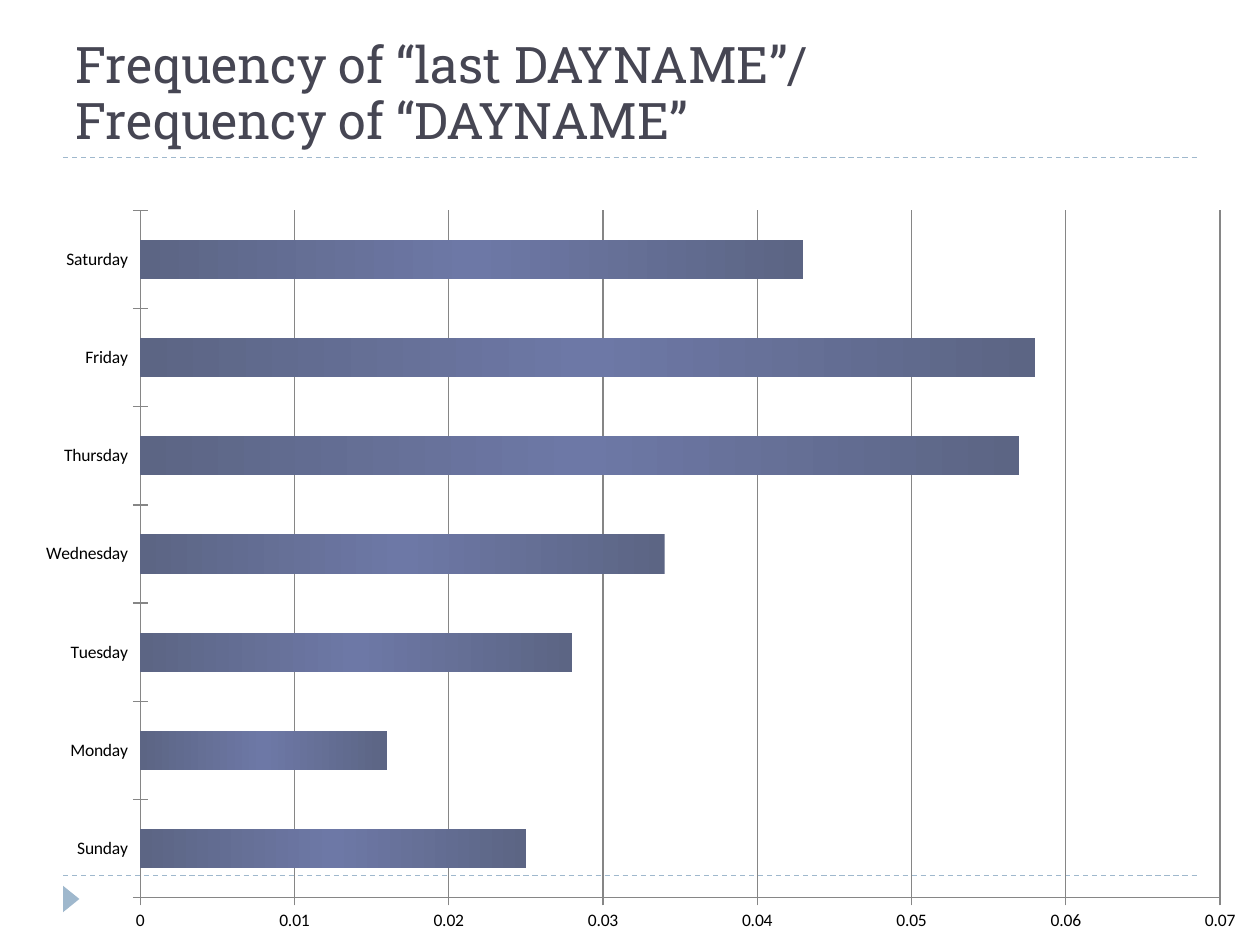
"""Build a slide with a bar chart of how often day names follow the word "last"."""
from lxml.etree import SubElement
from pptx import Presentation
from pptx.chart.data import CategoryChartData
from pptx.dml.color import RGBColor
from pptx.enum.chart import XL_CHART_TYPE, XL_TICK_MARK
from pptx.enum.dml import MSO_LINE
from pptx.enum.shapes import MSO_CONNECTOR, MSO_SHAPE
from pptx.enum.text import MSO_ANCHOR, MSO_AUTO_SIZE, PP_ALIGN
from pptx.oxml.ns import qn
from pptx.util import Inches, Pt

TITLE = ["Frequency of “last DAYNAME”/", "Frequency of “DAYNAME”"]
SHARES = {
    "Sunday": 0.025,
    "Monday": 0.016,
    "Tuesday": 0.028,
    "Wednesday": 0.034,
    "Thursday": 0.057,
    "Friday": 0.058,
    "Saturday": 0.043,
}
RULE_YS = [1.25, 6.95]

INK = RGBColor(0x46, 0x46, 0x53)
BLACK = RGBColor(0, 0, 0)
PALE_BLUE = RGBColor(0x9F, 0xB8, 0xCD)
GRID = RGBColor(0x86, 0x86, 0x86)
BAR_EDGE = RGBColor(0x5C, 0x65, 0x84)
BAR_MIDDLE = RGBColor(0x6D, 0x78, 0xA6)
BAR_STOPS = [(0, BAR_EDGE), (50, BAR_MIDDLE), (100, BAR_EDGE)]


def add_rule(s, y):
    line = s.shapes.add_connector(
        MSO_CONNECTOR.STRAIGHT, Inches(0.5), Inches(y), Inches(9.5), Inches(y))
    line.line.color.rgb = PALE_BLUE
    line.line.width = Pt(0.75)
    line.line.dash_style = MSO_LINE.DASH
    SubElement(line._element.spPr, qn("a:effectLst"))


def add_marker(s):
    sp = s.shapes.add_shape(MSO_SHAPE.ISOSCELES_TRIANGLE, Inches(0.46),
                            Inches(7.07), Inches(0.21), Inches(0.13))
    sp.rotation = 90
    sp.shadow.inherit = False
    sp.fill.solid()
    sp.fill.fore_color.rgb = PALE_BLUE
    sp.line.fill.background()


def fill_title(sp):
    sp.left, sp.top, sp.width, sp.height = map(Inches, (0.5, 0.25, 9, 1))
    tf = sp.text_frame
    tf.auto_size = MSO_AUTO_SIZE.NONE
    tf.vertical_anchor = MSO_ANCHOR.BOTTOM
    p = tf.paragraphs[0]
    p.alignment = PP_ALIGN.LEFT
    p.line_spacing = 0.93
    for i, text in enumerate(TITLE):
        if i:
            p.add_line_break()
        r = p.add_run()
        r.text = text
        r.font.name = "Roboto Slab"
        r.font.size = Pt(28.8)
        r.font.color.rgb = INK


def fill_bars(series):
    fill = series.format.fill
    fill.gradient()
    fill.gradient_angle = 0
    stops = fill._fill._gradFill.find(qn("a:gsLst"))
    for stop in list(stops):
        stops.remove(stop)
    for percent, color in BAR_STOPS:
        stop = SubElement(stops, qn("a:gs"), pos=str(percent * 1000))
        SubElement(stop, qn("a:srgbClr"), val=str(color))


def add_bar_chart(s):
    data = CategoryChartData()
    data.categories = list(SHARES)
    data.add_series("Series 1", list(SHARES.values()))
    chart = s.shapes.add_chart(
        XL_CHART_TYPE.BAR_CLUSTERED, Inches(0.17), Inches(1.55),
        Inches(9.83), Inches(5.95), data).chart
    chart.has_legend = False
    chart.has_title = False
    chart.font.name = "Calibri"
    chart.font.size = Pt(10)
    chart.font.color.rgb = BLACK

    plot = chart.plots[0]
    plot.gap_width = 150
    plot.vary_by_categories = False
    fill_bars(plot.series[0])

    values = chart.value_axis
    values.minimum_scale, values.maximum_scale = 0, 0.07
    values.major_unit = 0.01
    values.has_major_gridlines = True
    values.major_gridlines.format.line.color.rgb = GRID
    for axis in (values, chart.category_axis):
        axis.major_tick_mark = XL_TICK_MARK.CROSS
        axis.minor_tick_mark = XL_TICK_MARK.NONE
        axis.format.line.color.rgb = GRID


def main():
    prs = Presentation()
    prs.slide_width, prs.slide_height = Inches(10), Inches(7.5)
    s = prs.slides.add_slide(prs.slide_layouts[5])
    for y in RULE_YS:
        add_rule(s, y)
    add_marker(s)
    fill_title(s.shapes.title)
    add_bar_chart(s)
    prs.save("out.pptx")


if __name__ == "__main__":
    main()
